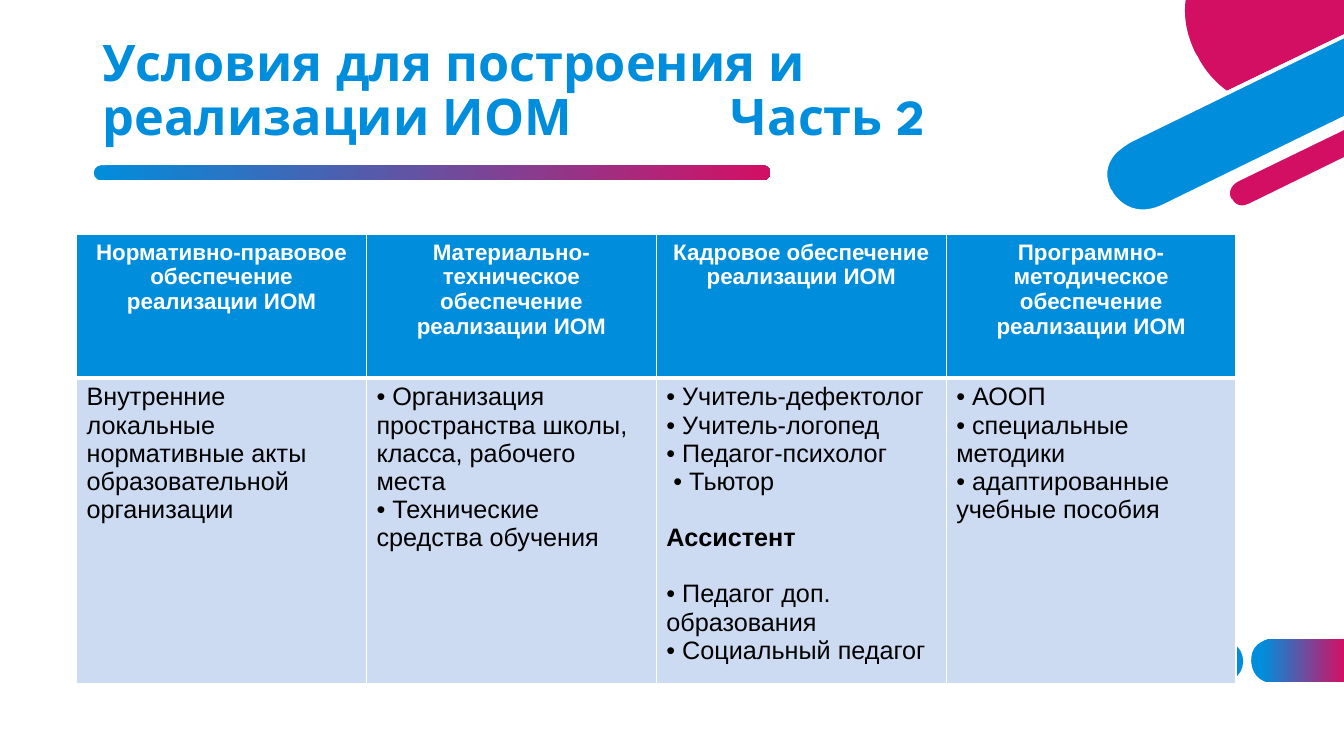
from lxml import etree
from pptx import Presentation
from pptx.dml.color import RGBColor
from pptx.enum.shapes import MSO_SHAPE
from pptx.enum.text import MSO_ANCHOR, MSO_AUTO_SIZE, PP_ALIGN
from pptx.oxml.ns import qn
from pptx.util import Inches, Pt

OVAL, ROUND = MSO_SHAPE.OVAL, MSO_SHAPE.ROUNDED_RECTANGLE
MIDDLE, FIXED = MSO_ANCHOR.MIDDLE, MSO_AUTO_SIZE.NONE
LEFT, CENTER = PP_ALIGN.LEFT, PP_ALIGN.CENTER
BLUE = RGBColor(0x00, 0x8E, 0xDC)
PINK = RGBColor(0xD3, 0x0F, 0x64)
PALE = RGBColor(0xCC, 0xDB, 0xF2)
WHITE = RGBColor(0xFF, 0xFF, 0xFF)
BLACK = RGBColor(0x00, 0x00, 0x00)

PILL = [(12.62, 6.77), (13.33, 6.77), (13.33, 6.34), (12.62, 6.34),
        (12.62, 6.34, 12.41, 6.34, 12.41, 6.55), (12.41, 6.56),
        (12.41, 6.56, 12.41, 6.77, 12.62, 6.77)]
DISC_RIM = [(13.33, 0.81), (13.06, 0.94), (12.74, 1.1, 12.44, 1.08, 12.19, 0.89),
            (11.99, 0.74, 11.89, 0.55, 11.89, 0.55), (11.88, 0.52),
            (11.79, 0.34, 11.75, 0.16, 11.78, 0), (11.74, 0),
            (11.71, 0.17, 11.75, 0.35, 11.84, 0.54), (11.86, 0.57),
            (11.86, 0.58, 11.96, 0.77, 12.16, 0.92),
            (12.28, 1.01, 12.44, 1.09, 12.65, 1.09),
            (12.77, 1.09, 12.91, 1.06, 13.08, 0.98), (13.33, 0.86)]
BAND = [(11.21, 1.39), (11.21, 1.39, 10.85, 1.57, 11.01, 1.89), (11.01, 1.9),
        (11.01, 1.9, 11.17, 2.22, 11.54, 2.04), (13.33, 1.17), (13.33, 0.36)]
DISC = [(11.88, 0.56), (11.88, 0.56, 11.97, 0.76, 12.17, 0.9), (13.33, 0.34),
        (13.33, 0), (11.76, 0), (11.74, 0.15, 11.76, 0.33, 11.86, 0.53)]
STRIP = [(13.33, 1.26), (12.27, 1.78), (12.27, 1.78, 12.13, 1.85, 12.2, 1.97),
         (12.2, 1.98), (12.2, 1.98, 12.26, 2.11, 12.4, 2.04), (13.33, 1.58)]
STRIP_RIM = [(12.39, 2.02), (12.27, 2.08, 12.22, 1.98, 12.22, 1.97), (12.21, 1.97),
             (12.16, 1.86, 12.28, 1.8, 12.28, 1.8), (13.33, 1.29), (13.33, 1.24),
             (12.26, 1.76), (12.26, 1.76, 12.19, 1.8, 12.17, 1.87),
             (12.15, 1.91, 12.16, 1.95, 12.18, 1.99),
             (12.2, 2.03, 12.25, 2.08, 12.32, 2.08),
             (12.35, 2.08, 12.38, 2.08, 12.41, 2.06), (13.33, 1.61), (13.33, 1.56)]
BAND_RIM = [(11.53, 2.03), (11.19, 2.19, 11.03, 1.9, 11.03, 1.89), (11.02, 1.88),
            (10.96, 1.75, 10.97, 1.64, 11.06, 1.53),
            (11.13, 1.46, 11.22, 1.41, 11.22, 1.41), (13.33, 0.38), (13.33, 0.34),
            (11.2, 1.37), (11.19, 1.38, 11.02, 1.46, 10.96, 1.63),
            (10.93, 1.71, 10.94, 1.8, 10.99, 1.9), (10.99, 1.91),
            (10.99, 1.91, 11.1, 2.12, 11.33, 2.12),
            (11.39, 2.12, 11.46, 2.1, 11.54, 2.06), (13.33, 1.19), (13.33, 1.15)]

HEADS = ["Нормативно-правовое обеспечение реализации ИОМ",
         "Материально-техническое обеспечение реализации ИОМ",
         "Кадровое обеспечение реализации ИОМ",
         "Программно-методическое обеспечение реализации ИОМ"]
HELPER = "Ассистент"
ITEMS = [["Внутренние локальные нормативные акты образовательной организации"],
         ["• Организация пространства школы, класса, рабочего места",
          "• Технические средства обучения"],
         ["• Учитель-дефектолог", "• Учитель-логопед", "• Педагог-психолог",
          " • Тьютор", HELPER, "• Педагог доп. образования", "• Социальный педагог"],
         ["• АООП", "• специальные методики", "• адаптированные учебные пособия"]]


def put(item, values):
    for name, value in values.items():
        setattr(item, name, value)


class Deck:
    TITLE = {"name": "League Spartan", "size": Pt(36), "bold": True}
    HEAD = {"name": "Arial", "size": Pt(16), "bold": True}
    BODY = {"name": "Arial", "size": Pt(18), "bold": False}

    def __init__(self):
        self.file = Presentation()
        put(self.file, {"slide_width": Inches(13.33), "slide_height": Inches(7.5)})
        self.slide = self.file.slides.add_slide(self.file.slide_layouts[5])
        self.shapes = self.slide.shapes

    def font(self, para, style, color):
        for run in para.runs:
            put(run.font, style)
            run.font.color.rgb = color

    def paint(self, shape, color, start=None):
        shape.shadow.inherit = False
        shape.line.fill.background()
        if start is None:
            shape.fill.solid()
            shape.fill.fore_color.rgb = color
            return
        shape.fill.gradient()
        shape.fill.gradient_angle = 0
        stops = zip(shape.fill.gradient_stops, (start, 1), (BLUE, PINK))
        for stop, place, tone in stops:
            stop.position = place
            stop.color.rgb = tone

    def shape(self, kind, box, color, start=None):
        shape = self.shapes.add_shape(kind, *map(Inches, box))
        self.paint(shape, color, start)
        return shape

    def free(self, path, color, start=None):
        spots = [tuple(map(Inches, part[-2:])) for part in path]
        form = self.shapes.build_freeform(*spots[0])
        form.add_line_segments(spots[1:], close=True)
        shape = form.convert_to_shape()
        self.bend(shape, path, form.shape_offset_x, form.shape_offset_y)
        self.paint(shape, color, start)

    def bend(self, shape, path, left, top):
        lines = list(shape._element.iter(qn("a:lnTo")))
        for line, part in zip(lines, path[1:]):
            if len(part) == 2:
                continue
            curve = etree.Element(qn("a:cubicBezTo"))
            for x, y in zip(part[::2], part[1::2]):
                etree.SubElement(curve, qn("a:pt"), x=str(Inches(x) - left),
                                 y=str(Inches(y) - top))
            line.getparent().replace(line, curve)

    def title(self, text, box, stop):
        title = self.shapes.title
        put(title, dict(zip(("left", "top", "width", "height"), map(Inches, box))))
        frame = title.text_frame
        frame.text = text
        put(frame, {"vertical_anchor": MIDDLE, "word_wrap": True, "auto_size": FIXED})
        para = frame.paragraphs[0]
        put(para, {"alignment": LEFT, "line_spacing": 0.9, "space_before": Pt(0)})
        self.font(para, self.TITLE, BLUE)
        tabs = etree.SubElement(para._p.get_or_add_pPr(), qn("a:tabLst"))
        etree.SubElement(tabs, qn("a:tab"), pos=str(Inches(stop)), algn="l")

    def cell(self, cell, lines, style, color, fill, align, base):
        cell.fill.solid()
        cell.fill.fore_color.rgb = fill
        self.edge(cell, base)
        cell.text = "\n".join(lines)
        for para in cell.text_frame.paragraphs:
            para.alignment = align
            self.font(para, style, color)
            if para.text == HELPER:
                put(para, {"space_before": Pt(20), "space_after": Pt(20)})
                para.runs[0].font.bold = True

    def edge(self, cell, base):
        props = cell._tc.get_or_add_tcPr()
        for spot, side in enumerate("LRTB"):
            width = Pt(base if side == "B" else 1)
            line = etree.Element(qn("a:ln" + side), w=str(width))
            fill = etree.SubElement(line, qn("a:solidFill"))
            etree.SubElement(fill, qn("a:srgbClr"), val=str(WHITE))
            props.insert(spot, line)

    def table(self, box, rows):
        table = self.shapes.add_table(2, len(HEADS), *map(Inches, box)).table
        table.horz_banding = False
        for row, height in zip(table.rows, rows):
            row.height = Inches(height)
        for col, (head, items) in enumerate(zip(HEADS, ITEMS)):
            self.cell(table.cell(0, col), [head], self.HEAD, WHITE, BLUE, CENTER, 3)
            self.cell(table.cell(1, col), items, self.BODY, BLACK, PALE, LEFT, 1)


def main():
    deck = Deck()
    deck.title("Условия для построения и реализации ИОМ\tЧасть 2",
               (0.92, 0.4, 9.9, 1.03), 6.23)
    deck.shape(OVAL, (11.91, 6.35, 0.42, 0.42), BLUE)
    deck.free(PILL, None, 0.12)
    for path, color in ((DISC_RIM, WHITE), (BAND, BLUE), (DISC, PINK), (STRIP, PINK),
                        (STRIP_RIM, WHITE), (BAND_RIM, WHITE)):
        deck.free(path, color)
    rule = deck.shape(ROUND, (0.93, 1.64, 6.71, 0.15), None, 0)
    rule.adjustments[0] = 0.5
    deck.table((0.76, 2.33, 11.5, 4.45), (1.42, 3.03))
    deck.file.save("out.pptx")


if __name__ == "__main__":
    main()
